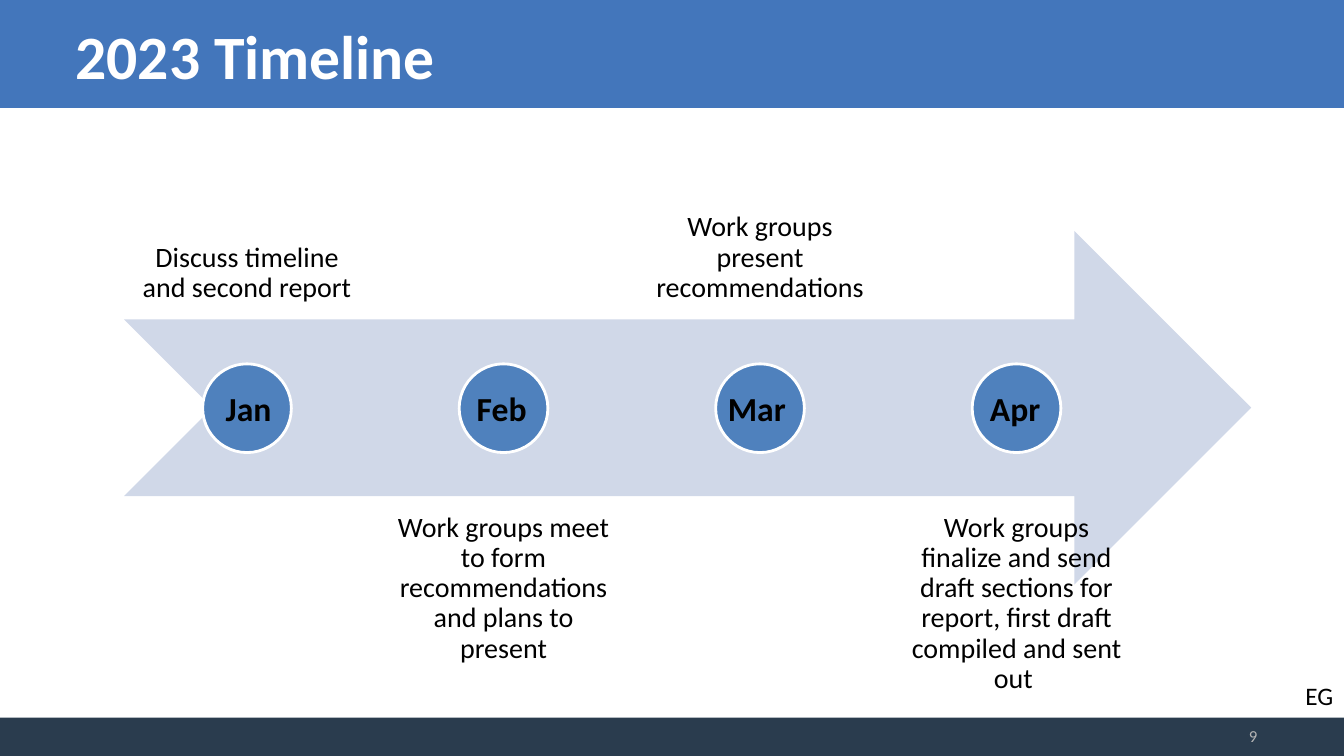
"""Build the 2023 timeline slide: an arrow with four monthly milestones."""
from pptx import Presentation
from pptx.dml.color import RGBColor
from pptx.enum.shapes import MSO_SHAPE as Preset
from pptx.enum.text import MSO_ANCHOR as Anchor, PP_ALIGN as Align
from pptx.util import Inches, Pt

WHITE = RGBColor(0xFF, 0xFF, 0xFF)
BLACK = RGBColor(0x00, 0x00, 0x00)
HEADER_BLUE = RGBColor(0x43, 0x76, 0xBB)
FOOTER_NAVY = RGBColor(0x2A, 0x3C, 0x4E)
ARROW_BLUE = RGBColor(0xD0, 0xD8, 0xE8)
MARKER_BLUE = RGBColor(0x4F, 0x81, 0xBD)
NUMBER_GRAY = RGBColor(0xB5, 0xB5, 0xB5)

deck = Presentation()
deck.slide_width, deck.slide_height = Inches(13.33), Inches(7.5)
page = deck.slides.add_slide(deck.slide_layouts[6])


def add_solid(preset, left, top, width, height, color):
    """Add a filled shape without outline or shadow."""
    shape = page.shapes.add_shape(
        preset, Inches(left), Inches(top), Inches(width), Inches(height))
    shape.shadow.inherit = False
    shape.fill.solid()
    shape.fill.fore_color.rgb = color
    shape.line.fill.background()
    return shape


def add_text(text, left, top, width, height, size, color=BLACK, bold=False,
             anchor=Anchor.TOP, align=Align.LEFT):
    """Add a wrapped one-paragraph text box and return its frame."""
    box = page.shapes.add_textbox(
        Inches(left), Inches(top), Inches(width), Inches(height))
    frame = box.text_frame
    frame.word_wrap = True
    frame.vertical_anchor = anchor
    para = frame.paragraphs[0]
    para.text = text
    para.alignment = align
    para.font.name = "Calibri"
    para.font.size = Pt(size)
    para.font.bold = bold
    para.font.color.rgb = color
    return frame


add_solid(Preset.RECTANGLE, 0, 0, 13.33, 1.07, HEADER_BLUE)
add_solid(Preset.RECTANGLE, 0, 7.12, 13.33, 0.38, FOOTER_NAVY)
add_text("2023 Timeline", 0.65, 0.06, 12, 0.96, 44, WHITE, True, Anchor.MIDDLE)
add_text("9", 9.58, 7.1, 2.99, 0.4, 12, NUMBER_GRAY,
         anchor=Anchor.MIDDLE, align=Align.RIGHT)

add_solid(Preset.NOTCHED_RIGHT_ARROW, 1.23, 2.29, 11.18, 3.51, ARROW_BLUE)

milestones = [
    ("Jan", 2.14, "Discuss timeline and second report"),
    ("Feb", 4.63, "Work groups meet to form recommendations and plans to present"),
    ("Mar", 7.12, "Work groups present recommendations"),
    ("Apr", 9.72, "Work groups finalize and send draft sections for report, "
                  "first draft compiled and sent out "),
]
STEP = 2.544
for index, (month, month_left, task) in enumerate(milestones):
    above = index % 2 == 0
    offset = index * STEP
    frame = add_text(task, 1.24 + offset, -0.34 if above else 4.93, 2.42, 3.51, 20,
                     anchor=Anchor.BOTTOM if above else Anchor.TOP,
                     align=Align.CENTER)
    frame.margin_left = frame.margin_right = Inches(0.16)
    frame.margin_top = frame.margin_bottom = Inches(0.16)
    frame.paragraphs[0].line_spacing = 0.9

    marker = add_solid(Preset.OVAL, 2.01 + offset, 3.61, 0.88, 0.88, MARKER_BLUE)
    marker.line.color.rgb = WHITE
    marker.line.width = Pt(2)
    add_text(month, month_left, 3.8, 1.25, 0.5, 24, bold=True)

add_text("EG", 12.85, 6.7, 1.1, 0.4, 18)

deck.save("out.pptx")
